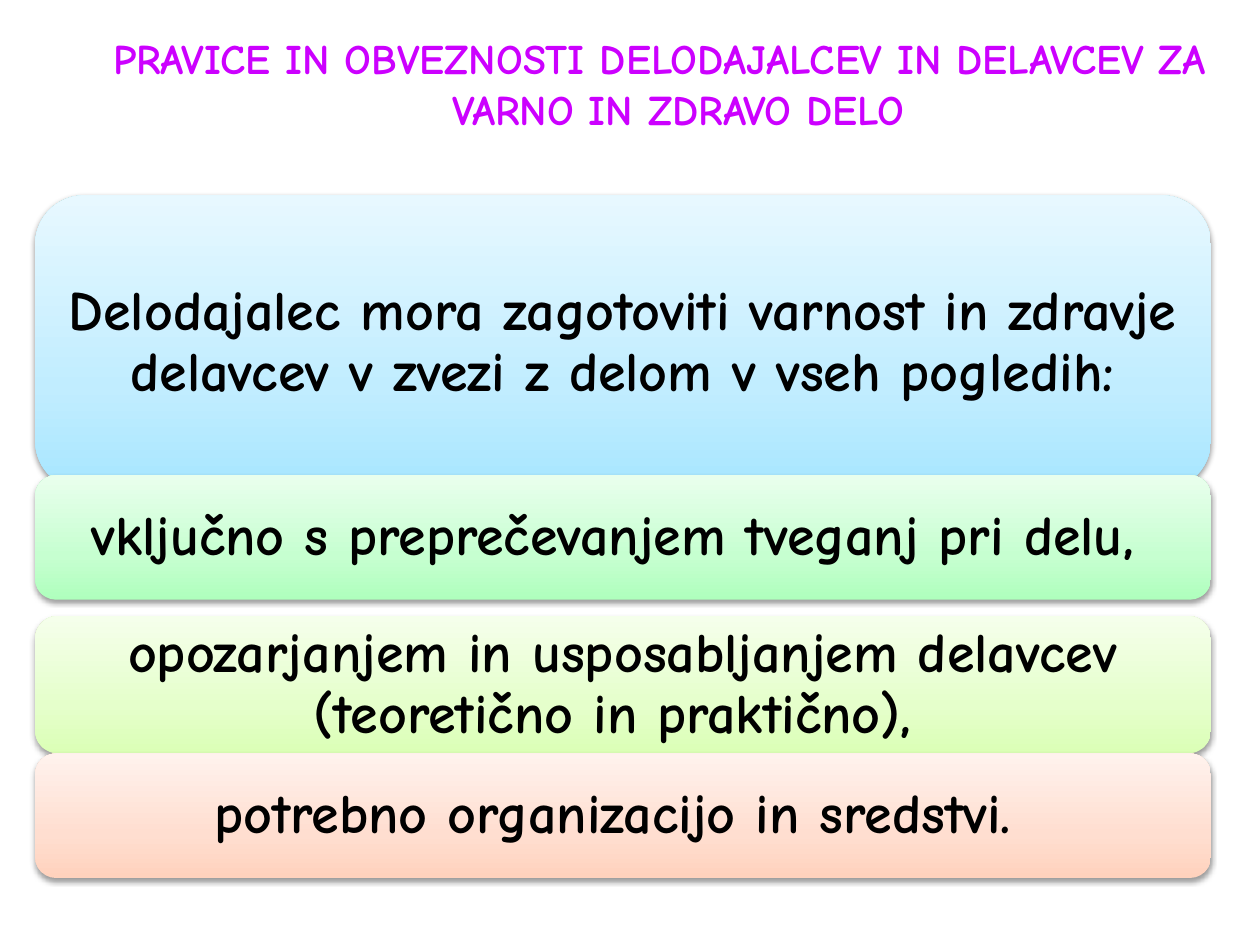
import pptx
import pptx.util
import pptx.dml.color
import pptx.enum.shapes
import pptx.enum.text
import pptx.oxml
import pptx.oxml.ns

Cm = pptx.util.Cm
Pt = pptx.util.Pt

COLOURS = {
    "title": "CC00FF",
    "text": "000000",
    "shadow": "000000",
    "blue": ("A7E6FF", "C1EDFF", "E7F8FF"),
    "green": ("AFFFBD", "C6FFD0", "E9FFED"),
    "lime": ("DBFFB6", "E5FFCB", "F5FFEB"),
    "peach": ("FFD2BD", "FFDED0", "FFF2ED"),
}
NAMESPACE = pptx.oxml.ns.nsdecls("a")


def write(box, text, size, colour, margins, anchor, before=0, after=0, spacing=1.0):
    frame = box.text_frame
    frame.word_wrap = True
    frame.vertical_anchor = anchor
    frame.margin_left = frame.margin_right = Cm(margins[0])
    frame.margin_top = frame.margin_bottom = Cm(margins[1])
    para = frame.paragraphs[0]
    para.alignment = pptx.enum.text.PP_ALIGN.CENTER
    para.space_before = Pt(before)
    para.space_after = Pt(after)
    para.line_spacing = spacing
    span = para.add_run()
    span.text = text
    span.font.name = "Comic Neue"
    span.font.size = Pt(size)
    span.font.bold = True
    span.font.color.rgb = pptx.dml.color.RGBColor.from_string(COLOURS[colour])
    return para


def style_panel(panel, colours):
    stops = "".join(
        f'<a:gs pos="{position * 1000}"><a:srgbClr val="{colour}"/></a:gs>'
        for position, colour in zip((0, 35, 100), colours)
    )
    panel.line.fill.background()
    panel.shadow.inherit = False
    properties = panel._element.spPr
    outline = properties.find(pptx.oxml.ns.qn("a:ln"))
    outline.addprevious(pptx.oxml.parse_xml(
        f'<a:gradFill {NAMESPACE} rotWithShape="1"><a:gsLst>{stops}</a:gsLst>'
        '<a:lin ang="16200000" scaled="1"/></a:gradFill>'
    ))
    properties.find(pptx.oxml.ns.qn("a:effectLst")).append(pptx.oxml.parse_xml(
        f'<a:outerShdw {NAMESPACE} blurRad="{Pt(3.1)}" dist="{Pt(1.6)}" dir="5400000" rotWithShape="0">'
        f'<a:srgbClr val="{COLOURS["shadow"]}"><a:alpha val="38000"/></a:srgbClr></a:outerShdw>'
    ))


deck = pptx.Presentation()
deck.slide_width = Cm(25.4)
deck.slide_height = Cm(19.05)
page = deck.slides.add_slide(deck.slide_layouts[6])

title = page.shapes.add_textbox(Cm(1.19), Cm(0.53), Cm(24.21), Cm(18.72))
heading = write(
    title, "PRAVICE IN OBVEZNOSTI DELODAJALCEV IN DELAVCEV ZA VARNO IN ZDRAVO DELO",
    size=24, colour="title", margins=(0.25, 0.13),
    anchor=pptx.enum.text.MSO_ANCHOR.TOP, before=4.8,
)
indents = heading._p.get_or_add_pPr()
indents.set("marL", str(Cm(0.76)))
indents.set("indent", str(-Cm(0.76)))

panels = [
    (3.94, 5.94, "blue", "Delodajalec mora zagotoviti varnost in zdravje delavcev v zvezi z delom v vseh pogledih:"),
    (9.58, 2.51, "green", "vključno s preprečevanjem tveganj pri delu, "),
    (12.42, 2.77, "lime", "opozarjanjem in usposabljanjem delavcev (teoretično in praktično), "),
    (15.19, 2.51, "peach", "potrebno organizacijo in sredstvi. "),
]
for top, height, colour, text in panels:
    panel = page.shapes.add_shape(
        pptx.enum.shapes.MSO_SHAPE.ROUNDED_RECTANGLE, Cm(0.71), Cm(top), Cm(23.7), Cm(height)
    )
    style_panel(panel, COLOURS[colour])
    write(
        panel, text, size=32, colour="text", margins=(0.33, 0.33),
        anchor=pptx.enum.text.MSO_ANCHOR.MIDDLE, after=11.2, spacing=0.9,
    )

deck.save("out.pptx")
